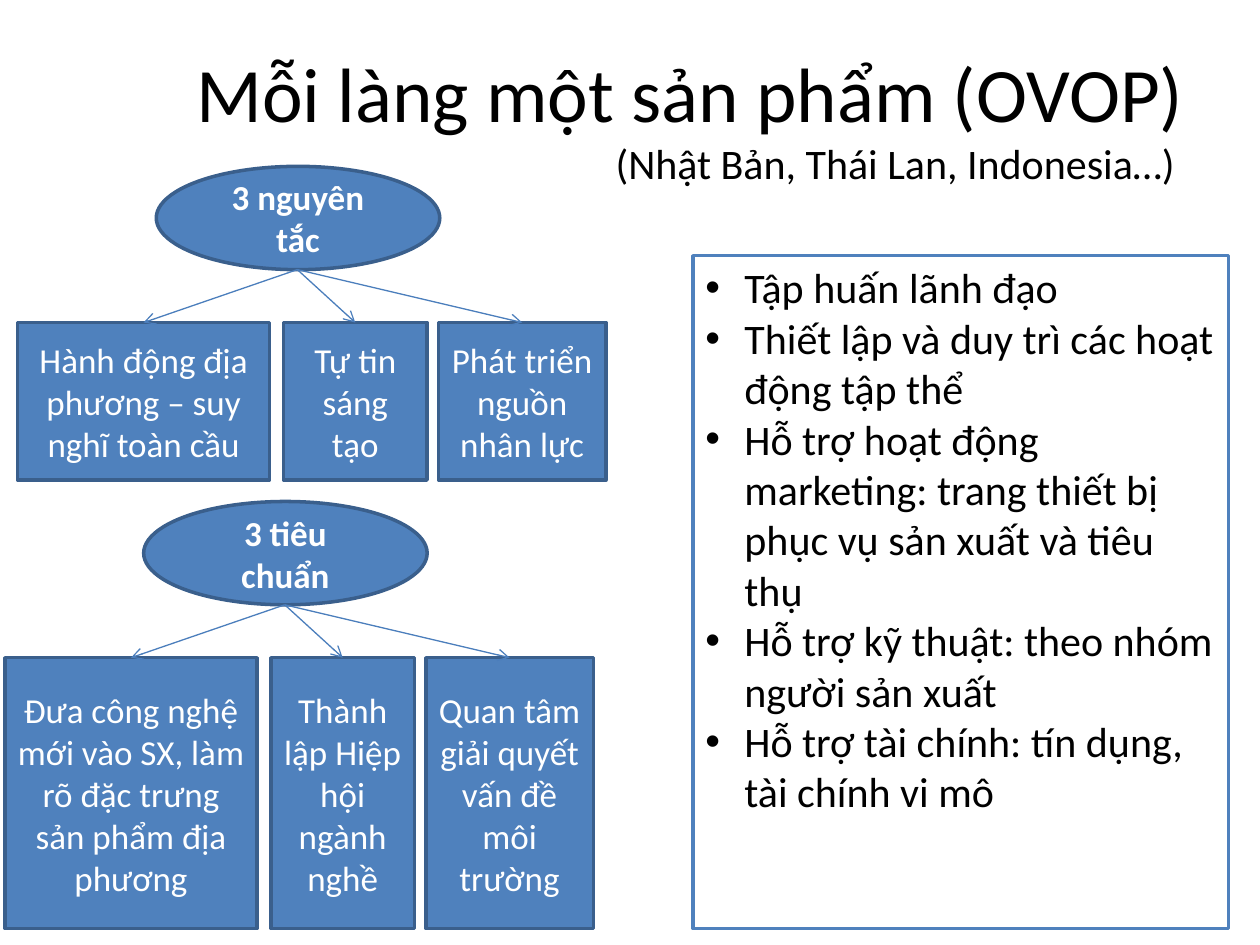
from lxml import etree
from pptx import Presentation
from pptx.dml.color import RGBColor
from pptx.enum.shapes import MSO_CONNECTOR, MSO_SHAPE
from pptx.enum.text import MSO_ANCHOR, PP_ALIGN
from pptx.oxml.ns import qn
from pptx.util import Pt

RECT, ELLIPSE = MSO_SHAPE.RECTANGLE, MSO_SHAPE.OVAL
STRAIGHT = MSO_CONNECTOR.STRAIGHT
LEFT, CENTER, RIGHT = PP_ALIGN.LEFT, PP_ALIGN.CENTER, PP_ALIGN.RIGHT
TOP, MIDDLE = MSO_ANCHOR.TOP, MSO_ANCHOR.MIDDLE

FONT = "Calibri"
BLUE, EDGE, ARROW = "4F81BD", "3A5F8C", "4B7EBC"
WHITE, BLACK = "FFFFFF", "000000"

BOX_COLUMNS = [(0, 200), (211, 114), (334, 133)]  # left offset, width
ELLIPSE_OFFSET, ELLIPSE_W, ELLIPSE_H = 110, 225, 82
BOX_DROP = 124  # from ellipse top to box top


def px(n):
    """Turn px (100 to the inch) into EMU."""
    return n * 9144


def color(hex_string):
    return RGBColor.from_string(hex_string)


def style(font, size, hex_string, bold=False):
    font.name, font.size, font.bold = FONT, Pt(size), bold
    font.color.rgb = color(hex_string)


def add_box(slide, kind, x, y, w, h, fill, line):
    sp = slide.shapes.add_shape(kind, px(x), px(y), px(w), px(h))
    sp.shadow.inherit = False
    sp.fill.solid()
    sp.fill.fore_color.rgb = color(fill)
    sp.line.color.rgb = color(line)
    sp.line.width = Pt(2)
    sp.text_frame.word_wrap = True
    return sp


def add_node(slide, kind, x, y, w, h, text, bold=False):
    sp = add_box(slide, kind, x, y, w, h, BLUE, EDGE)
    tf = sp.text_frame
    tf.vertical_anchor = MIDDLE
    p = tf.paragraphs[0]
    p.text, p.alignment = text, CENTER
    style(p.font, 20, WHITE, bold)
    return sp


def add_arrow(slide, x, y, target):
    """Draw an arrow from a point to the top middle of the target."""
    line = slide.shapes.add_connector(STRAIGHT, px(x), px(y), px(x), px(y))
    line.end_connect(target, 0)
    line.line.color.rgb = color(ARROW)
    line.line.width = Pt(0.75)
    ln = line.line._get_or_add_ln()
    etree.SubElement(ln, qn("a:tailEnd"), type="arrow")
    etree.SubElement(line._element.spPr, qn("a:effectLst"))


def add_title(slide, x, y, w, h, title, subtitle):
    tf = slide.shapes.add_textbox(px(x), px(y), px(w), px(h)).text_frame
    tf.word_wrap = True
    tf.vertical_anchor = MIDDLE
    p = tf.paragraphs[0]
    p.alignment = RIGHT
    r = p.add_run()
    r.text = title
    style(r.font, 44, BLACK)
    p.add_line_break()
    r = p.add_run()
    r.text = subtitle
    style(r.font, 24, BLACK)


def add_tree(slide, x, y, box_h, heading, items):
    """Place a heading ellipse with arrows down to a row of boxes."""
    boxes = [
        add_node(slide, RECT, x + dx, y + BOX_DROP, w, box_h, text)
        for (dx, w), text in zip(BOX_COLUMNS, items)
    ]
    left = x + ELLIPSE_OFFSET
    add_node(slide, ELLIPSE, left, y, ELLIPSE_W, ELLIPSE_H, heading, bold=True)
    for box in boxes:
        add_arrow(slide, left + ELLIPSE_W // 2, y + ELLIPSE_H, box)


def add_bullet_panel(slide, x, y, w, h, items):
    tf = add_box(slide, RECT, x, y, w, h, WHITE, BLUE).text_frame
    tf.vertical_anchor = TOP
    for i, text in enumerate(items):
        p = tf.add_paragraph() if i else tf.paragraphs[0]
        p.text, p.alignment = text, LEFT
        style(p.font, 24, BLACK)
        pPr = p._p.get_or_add_pPr()
        pPr.set("marL", str(px(31)))
        pPr.set("indent", str(-px(31)))
        bullet_font = etree.Element(qn("a:buFont"), typeface="Arial")
        bullet = etree.Element(qn("a:buChar"), char="•")
        pPr.insert(0, bullet_font)
        pPr.insert(1, bullet)


def main():
    prs = Presentation()
    prs.slide_width, prs.slide_height = px(1000), px(750)
    slide = prs.slides.add_slide(prs.slide_layouts[6])

    add_title(slide, 50, 30, 900, 125, "Mỗi làng một sản phẩm (OVOP)",
              "(Nhật Bản, Thái Lan, Indonesia…) ")
    add_tree(slide, 14, 132, 125, "3 nguyên tắc", [
        "Hành động địa phương – suy nghĩ toàn cầu",
        "Tự tin sáng tạo",
        "Phát triển nguồn nhân lực",
    ])
    add_tree(slide, 4, 398, 215, "3 tiêu chuẩn", [
        "Đưa công nghệ mới vào SX, làm rõ đặc trưng sản phẩm địa phương",
        "Thành lập Hiệp hội ngành nghề",
        "Quan tâm giải quyết vấn đề môi trường",
    ])
    add_bullet_panel(slide, 550, 203, 425, 534, [
        "Tập huấn lãnh đạo",
        "Thiết lập và duy trì các hoạt động tập thể",
        "Hỗ trợ hoạt động marketing: trang thiết bị phục vụ sản xuất và tiêu thụ",
        "Hỗ trợ kỹ thuật: theo nhóm người sản xuất",
        "Hỗ trợ tài chính: tín dụng, tài chính vi mô",
    ])
    prs.save("out.pptx")


if __name__ == "__main__":
    main()
